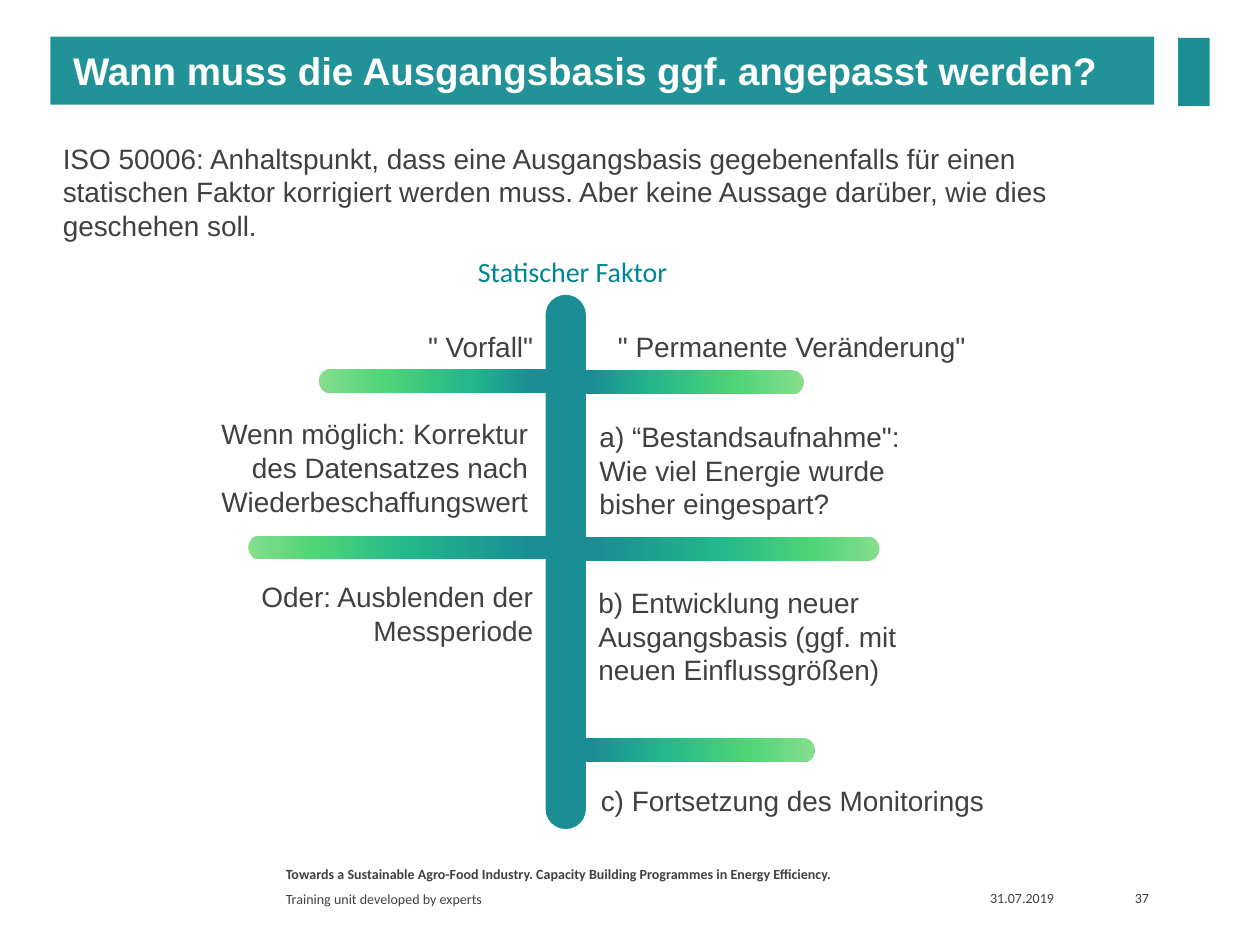
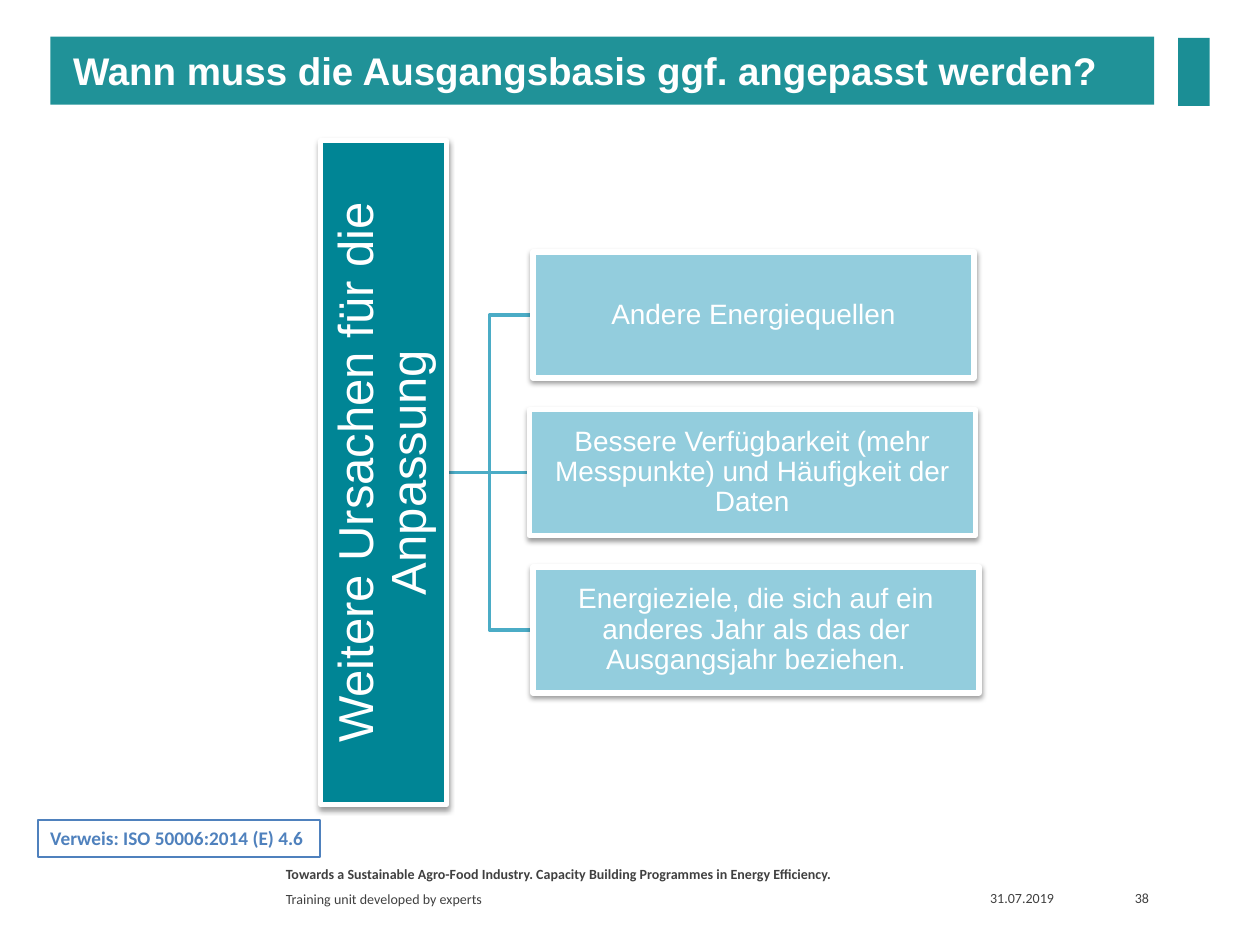
from typing import NamedTuple

from lxml import etree
from pptx import Presentation
from pptx.dml.color import RGBColor
from pptx.enum.shapes import MSO_CONNECTOR, MSO_SHAPE
from pptx.enum.text import MSO_ANCHOR, PP_ALIGN
from pptx.oxml import parse_xml
from pptx.oxml.ns import nsdecls, qn
from pptx.util import Emu, Pt

EMU_PER_PX = 9144  # 100 px to the inch
LEFT, CENTER, RIGHT = PP_ALIGN.LEFT, PP_ALIGN.CENTER, PP_ALIGN.RIGHT
TOP, MIDDLE = MSO_ANCHOR.TOP, MSO_ANCHOR.MIDDLE
RECT, ROUNDED = MSO_SHAPE.RECTANGLE, MSO_SHAPE.ROUNDED_RECTANGLE
STRAIGHT, ELBOW = MSO_CONNECTOR.STRAIGHT, MSO_CONNECTOR.ELBOW

COLORS = {
    "text": "404040",
    "white": "FFFFFF",
    "band": "209298",
    "teal": "1B8E95",
    "deep_teal": "008595",
    "light_green": "86DE8D",
    "green": "4FD476",
    "sea_green": "22B88B",
    "reference": "4F81BD",
    "tree_line": "4BACC6",
    "cause": "93CDDD",
    "shadow": "000000",
}
BRANCH_COLORS = ("light_green", "green", "sea_green", "teal")
DEFAULT_INSETS = (10, 5, 10, 5)
TITLE = "Wann muss die Ausgangsbasis ggf. angepasst werden?"


class Box(NamedTuple):
    left: int
    top: int
    width: int
    height: int

    @property
    def middle(self) -> int:
        return self.top + self.height // 2


class Label(NamedTuple):
    text: str
    box: Box
    align: PP_ALIGN = LEFT


class Branch(NamedTuple):
    box: Box
    stops: tuple
    points_right: bool = False


class Cause(NamedTuple):
    text: str
    box: Box


FOOTERS = (
    (Label("31.07.2019", Box(776, 703, 83, 20)), DEFAULT_INSETS),
    (Label("Training unit developed by experts", Box(217, 704, 550, 19)), DEFAULT_INSETS),
)
PROGRAMME = Label(
    "Towards a Sustainable Agro-Food Industry. Capacity Building Programmes in Energy Efficiency.",
    Box(217, 682, 550, 21),
)

TRUNK = Box(433, 234, 32, 424)
BRANCHES = (
    Branch(Box(253, 293, 192, 19), (0, 28, 62, 88)),
    Branch(Box(446, 294, 192, 19), (0, 28, 62, 88), True),
    Branch(Box(197, 425, 244, 19), (0, 22, 52, 92)),
    Branch(Box(454, 426, 244, 19), (0, 22, 52, 92), True),
    Branch(Box(455, 586, 192, 19), (0, 28, 62, 92), True),
)
FACTOR_LABELS = (
    Label(
        "ISO 50006: Anhaltspunkt, dass eine Ausgangsbasis gegebenenfalls für einen "
        "statischen Faktor korrigiert werden muss. Aber keine Aussage darüber, "
        "wie dies geschehen soll.",
        Box(40, 107, 850, 91),
    ),
    Label('" Vorfall"', Box(282, 257, 151, 37), RIGHT),
    Label('" Permanente Veränderung"', Box(465, 257, 311, 37), RIGHT),
    Label("Wenn möglich: Korrektur des Datensatzes nach Wiederbeschaffungswert",
          Box(152, 326, 277, 91), RIGHT),
    Label('a) “Bestandsaufnahme": Wie viel Energie wurde bisher eingespart?',
          Box(466, 328, 277, 91)),
    Label("Oder: Ausblenden der Messperiode", Box(156, 455, 277, 64), RIGHT),
    Label("b) Entwicklung neuer Ausgangsbasis (ggf. mit neuen Einflussgrößen)",
          Box(465, 460, 292, 91)),
    Label("c) Fortsetzung des Monitorings", Box(467, 617, 350, 37)),
)

ROOT = Box(41, 325, 527, 100)
ROOT_RIGHT = 354
CAUSES = (
    Cause("Andere Energiequellen", Box(423, 200, 350, 100)),
    Cause("Bessere Verfügbarkeit (mehr Messpunkte) und Häufigkeit der Daten",
          Box(420, 325, 354, 100)),
    Cause("Energieziele, die sich auf ein anderes Jahr als das der Ausgangsjahr beziehen.",
          Box(423, 450, 354, 100)),
)


def px(length: int) -> Emu:
    return Emu(length * EMU_PER_PX)


def rgb(color: str) -> RGBColor:
    return RGBColor.from_string(COLORS[color])


def write_text(shape, text: str, *, size: int = 16, font: str = "Arial",
               color: str = "text", bold: bool = False, align: PP_ALIGN = LEFT,
               anchor: MSO_ANCHOR = TOP, insets: tuple = DEFAULT_INSETS,
               line_spacing: float = 1.0, wrap: bool = True) -> None:
    frame = shape.text_frame
    frame.word_wrap = wrap
    frame.vertical_anchor = anchor
    frame.margin_left, frame.margin_top, frame.margin_right, frame.margin_bottom = map(px, insets)
    paragraph = frame.paragraphs[0]
    paragraph.alignment = align
    paragraph.line_spacing = line_spacing
    run = paragraph.add_run()
    run.text = text
    run.font.size, run.font.name, run.font.bold = Pt(size), font, bold
    run.font.color.rgb = rgb(color)


def add_label(slide, label: Label, **text_format) -> None:
    textbox = slide.shapes.add_textbox(*map(px, label.box))
    write_text(textbox, label.text, align=label.align, **text_format)


def add_block(slide, box: Box, fill: str, kind: MSO_SHAPE = RECT,
              line: str = "", line_width: int = 1):
    block = slide.shapes.add_shape(kind, *map(px, box))
    block.shadow.inherit = False
    block.fill.solid()
    block.fill.fore_color.rgb = rgb(fill)
    if line:
        block.line.color.rgb = rgb(line)
        block.line.width = Pt(line_width)
    else:
        block.line.fill.background()
    if kind == ROUNDED:
        block.adjustments[0] = 0.5
    return block


def add_branch(slide, branch: Branch) -> None:
    """Draw a rounded bar that fades from teal at the trunk to light green."""
    bar = add_block(slide, branch.box, "teal", ROUNDED)
    bar.rotation = 180 if branch.points_right else 0
    bar.fill.gradient()
    bar.fill.gradient_angle = 0
    stop_list = bar.fill._fill._gradFill.find(qn("a:gsLst"))
    for old_stop in list(stop_list):
        stop_list.remove(old_stop)
    for position, color in zip(branch.stops, BRANCH_COLORS):
        stop = etree.SubElement(stop_list, qn("a:gs"), pos=str(position * 1000))
        etree.SubElement(stop, qn("a:srgbClr"), val=COLORS[color])


def add_tree_box(slide, box: Box, fill: str, text: str, size: int, inset: int):
    """Draw a white-edged box with a soft shadow below it."""
    tree_box = add_block(slide, box, fill, line="white", line_width=3)
    effects = tree_box._element.spPr.find(qn("a:effectLst"))
    effects.append(parse_xml(
        f'<a:outerShdw {nsdecls("a")} blurRad="40000" dist="20000" dir="5400000" '
        f'rotWithShape="0"><a:srgbClr val="{COLORS["shadow"]}"><a:alpha val="38000"/>'
        "</a:srgbClr></a:outerShdw>"
    ))
    write_text(tree_box, text, size=size, color="white", align=CENTER, anchor=MIDDLE,
               insets=(inset,) * 4, line_spacing=0.9)
    return tree_box


def add_tree_line(slide, target: Box) -> None:
    kind = STRAIGHT if target.middle == ROOT.middle else ELBOW
    ends = (ROOT_RIGHT, ROOT.middle, target.left, target.middle)
    connector = slide.shapes.add_connector(kind, *map(px, ends))
    connector.line.color.rgb = rgb("tree_line")
    connector.line.width = Pt(2)
    etree.SubElement(connector._element.spPr, qn("a:effectLst"))


def add_base_slide(presentation, number: int):
    """Add a blank slide with the title band and footers."""
    slide = presentation.slides.add_slide(presentation.slide_layouts[6])
    add_label(slide, PROGRAMME, size=8, font="Calibri", bold=True)
    page = Label(str(number), Box(860, 703, 56, 20), RIGHT)
    for label, insets in (*FOOTERS, (page, (10, 5, 4, 5))):
        add_label(slide, label, size=8, font="Calibri", anchor=MIDDLE, insets=insets)
    band = add_block(slide, Box(40, 29, 876, 54), "band")
    write_text(band, TITLE, size=22, color="white", bold=True, anchor=MIDDLE,
               insets=(18, 5, 10, 5))
    add_block(slide, Box(935, 30, 25, 54), "teal")
    return slide


def build_static_factor_slide(presentation) -> None:
    slide = add_base_slide(presentation, 37)
    for branch in BRANCHES:
        add_branch(slide, branch)
    add_block(slide, TRUNK, "teal", ROUNDED)
    heading = Label("Statischer Faktor", Box(352, 197, 205, 37), CENTER)
    add_label(slide, heading, font="Calibri", color="deep_teal")
    for label in FACTOR_LABELS:
        add_label(slide, label)


def build_causes_slide(presentation) -> None:
    slide = add_base_slide(presentation, 38)
    reference = add_block(slide, Box(30, 651, 224, 29), "white", line="reference")
    write_text(reference, "Verweis: ISO 50006:2014 (E) 4.6", size=11, font="Calibri",
               color="reference", bold=True, wrap=False)
    for cause in CAUSES:
        add_tree_line(slide, cause.box)
    root = add_tree_box(slide, ROOT, "deep_teal", "Weitere Ursachen für die Anpassung", 28, 2)
    root.rotation = 270
    for cause in CAUSES:
        add_tree_box(slide, cause.box, "cause", cause.text, 16, 1)


def main() -> None:
    presentation = Presentation()
    presentation.slide_width, presentation.slide_height = px(1000), px(750)
    build_static_factor_slide(presentation)
    build_causes_slide(presentation)
    presentation.save("out.pptx")


if __name__ == "__main__":
    main()
